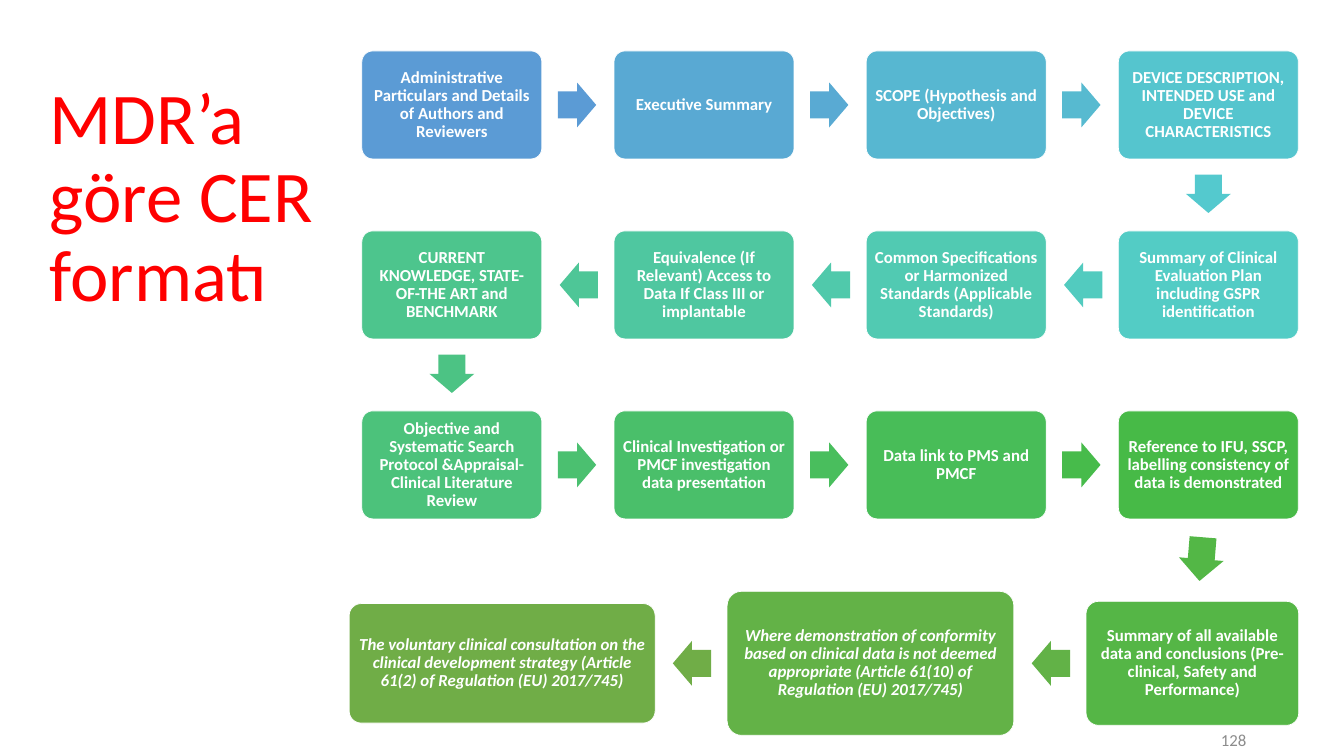
from pptx import Presentation
from pptx.dml.color import RGBColor
from pptx.enum.shapes import MSO_SHAPE
from pptx.enum.text import MSO_ANCHOR, MSO_AUTO_SIZE, PP_ALIGN
from pptx.util import Cm, Pt

RED = RGBColor(0xFF, 0x00, 0x00)
WHITE = RGBColor(0xFF, 0xFF, 0xFF)
GREY = RGBColor(0x8C, 0x8C, 0x8C)

# Text, box colour, colour of the arrow that leaves the box
STEPS = [
    ("Administrative Particulars and Details of Authors and Reviewers",
     RGBColor(0x5B, 0x9B, 0xD5), RGBColor(0x5B, 0x9B, 0xD5)),
    ("Executive Summary",
     RGBColor(0x59, 0xA9, 0xD3), RGBColor(0x59, 0xAA, 0xD3)),
    ("SCOPE (Hypothesis and Objectives)",
     RGBColor(0x57, 0xB7, 0xD1), RGBColor(0x57, 0xBA, 0xD0)),
    ("DEVICE DESCRIPTION, INTENDED USE and DEVICE CHARACTERISTICS",
     RGBColor(0x55, 0xC5, 0xCE), RGBColor(0x54, 0xC9, 0xCE)),
    ("Summary of Clinical Evaluation Plan including GSPR identification",
     RGBColor(0x53, 0xCC, 0xC5), RGBColor(0x52, 0xCB, 0xBF)),
    ("Common Specifications or Harmonized Standards (Applicable Standards)",
     RGBColor(0x51, 0xCA, 0xB2), RGBColor(0x50, 0xC9, 0xAB)),
    ("Equivalence (If Relevant) Access to Data If Class III or implantable",
     RGBColor(0x4F, 0xC7, 0xA0), RGBColor(0x4E, 0xC6, 0x97)),
    ("CURRENT KNOWLEDGE, STATE-OF-THE ART and BENCHMARK",
     RGBColor(0x4D, 0xC5, 0x8D), RGBColor(0x4C, 0xC3, 0x84)),
    ("Objective and Systematic Search Protocol &Appraisal- Clinical Literature Review",
     RGBColor(0x4C, 0xC2, 0x7B), RGBColor(0x4B, 0xC0, 0x70)),
    ("Clinical Investigation or PMCF investigation data presentation",
     RGBColor(0x4A, 0xBF, 0x6A), RGBColor(0x49, 0xBE, 0x5D)),
    ("Data link to PMS and PMCF",
     RGBColor(0x48, 0xBD, 0x58), RGBColor(0x47, 0xBB, 0x4B)),
    ("Reference to IFU, SSCP, labelling consistency of data is demonstrated",
     RGBColor(0x47, 0xBA, 0x47), RGBColor(0x53, 0xB7, 0x46)),
    ("Summary of all available data and conclusions (Pre-clinical, Safety and Performance)",
     RGBColor(0x55, 0xB6, 0x46), RGBColor(0x62, 0xB2, 0x47)),
    ("Where demonstration of conformity based on clinical data is not deemed "
     "appropriate (Article 61(10) of Regulation (EU) 2017/745)",
     RGBColor(0x63, 0xB2, 0x47), RGBColor(0x70, 0xAD, 0x47)),
    ("The voluntary clinical consultation on the clinical development strategy "
     "(Article 61(2) of Regulation (EU) 2017/745)",
     RGBColor(0x70, 0xAD, 0x47), None),
]

# All lengths in cm
COLS = 4
LEFT, TOP = 18.24, 2.57
BOX_W, BOX_H = 9.07, 5.44
STEP_X, STEP_Y = 12.71, 9.07
ARROW_W, ARROW_H = 1.93, 2.26
LAST_MID = 33.43
# Left and size of each box in the last row
LAST_ROW = [(54.74, 10.72, 6.25), (36.65, 14.45, 7.26), (17.6, 15.42, 6.02)]


def write(shape, text, anchor, align, inset, spacing, **font):
    """Fill the shape with one formatted paragraph."""
    frame = shape.text_frame
    frame.text = text
    layout = dict(word_wrap=True, auto_size=MSO_AUTO_SIZE.NONE,
                  vertical_anchor=anchor)
    for side in ("left", "top", "right", "bottom"):
        layout["margin_" + side] = Cm(inset)
    for key, value in layout.items():
        setattr(frame, key, value)
    par = frame.paragraphs[0]
    par.alignment = align
    par.line_spacing = spacing
    color = font.pop("color")
    for key, value in dict(name="Calibri", **font).items():
        setattr(par.font, key, value)
    par.font.color.rgb = color


def draw(kind, x, y, w, h, fill, adjust):
    """Add a plain filled shape without shadow or line."""
    shape = slide.shapes.add_shape(kind, Cm(x), Cm(y), Cm(w), Cm(h))
    shape.shadow.inherit = False
    shape.fill.solid()
    shape.fill.fore_color.rgb = fill
    shape.line.fill.background()
    for i, value in enumerate(adjust):
        shape.adjustments[i] = value
    return shape


deck = Presentation()
deck.slide_width, deck.slide_height = Cm(67.74), Cm(38.1)
slide = deck.slides.add_slide(deck.slide_layouts[5])

title = slide.shapes.title
title.left, title.top, title.width, title.height = Cm(2), Cm(3.23), Cm(17.5), Cm(13)
write(title, "MDR’a göre CER formatı", MSO_ANCHOR.BOTTOM, PP_ALIGN.LEFT,
      0.51, 0.9, size=Pt(104), color=RED)
# Narrower insets at top and bottom than at the sides
title.text_frame.margin_top = title.text_frame.margin_bottom = Cm(0.25)

for n, (text, fill, tint) in enumerate(STEPS):
    row, i = divmod(n, COLS)
    ahead = row % 2 == 0
    if row < 3:
        x = LEFT + STEP_X * (i if ahead else COLS - 1 - i)
        y, w, h = TOP + STEP_Y * row, BOX_W, BOX_H
    else:
        x, w, h = LAST_ROW[i]
        y = LAST_MID - h / 2
    box = draw(MSO_SHAPE.ROUNDED_RECTANGLE, x, y, w, h, fill, [0.1])
    box.line.color.rgb = WHITE
    box.line.width = Pt(1)
    write(box, text, MSO_ANCHOR.MIDDLE, PP_ALIGN.CENTER, 0.25, 0.9,
          size=Pt(24), bold=True, italic=n > 12, color=WHITE)
    if tint is None:
        continue

    size = ARROW_W
    ax, ay = x + w + 0.81, y + (h - ARROW_H) / 2
    turn = 0
    if n == 11:
        ax, ay, size, turn = 59.44, 27.05, 2.21, 94.7
    elif i == COLS - 1:
        ax, ay, turn = x + (w - ARROW_W) / 2, y + 6.07, 90
    elif not ahead:
        ax, turn = x - 0.81 - ARROW_W, 180
    arrow = draw(MSO_SHAPE.RIGHT_ARROW, ax, ay, size, ARROW_H, tint, [0.6, 0.5])
    arrow.rotation = turn

# The page number sits in the strip below the last row
number = slide.shapes.add_textbox(Cm(47.83), Cm(36.7), Cm(15.24), Cm(1.2))
write(number, "128", MSO_ANCHOR.MIDDLE, PP_ALIGN.RIGHT, 0, 1,
      size=Pt(24), color=GREY)
number.text_frame.margin_right = Cm(0.25)

deck.save("out.pptx")
